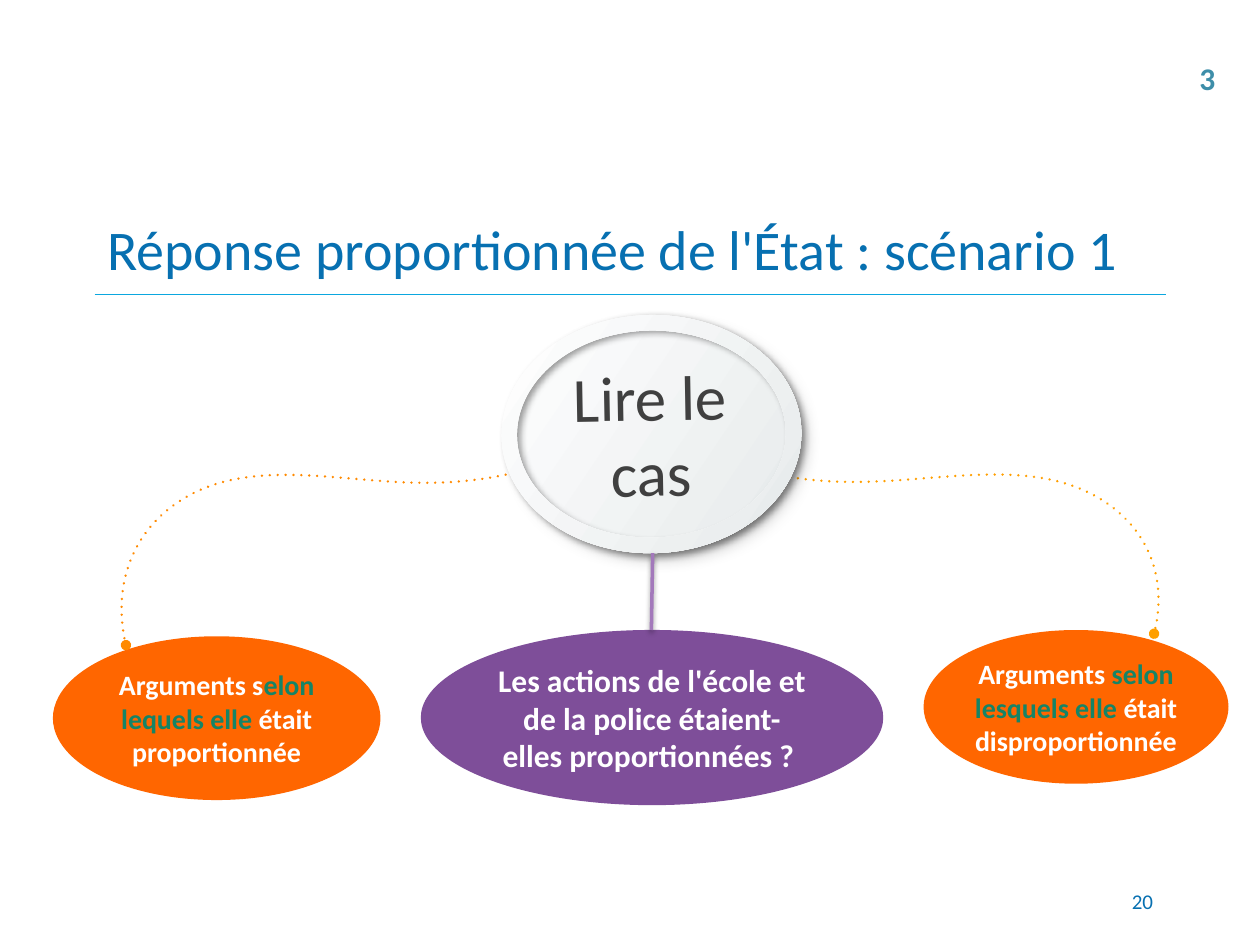
from dataclasses import dataclass
from typing import NamedTuple

from lxml.etree import SubElement
from pptx import Presentation
from pptx.dml.color import RGBColor
from pptx.enum.shapes import MSO_CONNECTOR, MSO_SHAPE
from pptx.enum.text import MSO_ANCHOR, MSO_AUTO_SIZE, PP_ALIGN
from pptx.oxml.ns import qn
from pptx.util import Inches, Pt


@dataclass(frozen=True)
class Theme:
    """Colours and type sizes of the deck."""
    font: str = "Calibri"
    blue: str = "0770B1"
    rule: str = "0BA7DF"
    teal: str = "3E8EA9"
    orange: str = "FF6600"
    left_curve: str = "FF8A00"
    right_curve: str = "FF9F00"
    purple: str = "7E4E99"
    stem: str = "A379BB"
    green: str = "158466"
    grey: str = "404040"
    white: str = "FFFFFF"
    silver: str = "E6EAEB"
    shadow: str = "000000"
    title_size: int = 32
    hub_size: int = 36
    question_size: int = 18
    argument_size: int = 16
    number_size: int = 12


class Box(NamedTuple):
    """A region in inches."""
    left: float
    top: float
    width: float
    height: float

    def lengths(self):
        """Return the four lengths of the region."""
        return [Inches(value) for value in self]


THEME = Theme()


def colour(code):
    """Turn a hex code into a colour."""
    return RGBColor.from_string(code)


def write(frame, spans, size, bold=False, align=PP_ALIGN.CENTER, inset=0.04):
    """Fill a text frame with one paragraph of (text, colour) spans."""
    frame.word_wrap = True
    frame.vertical_anchor = MSO_ANCHOR.MIDDLE
    frame.margin_left = frame.margin_right = Inches(inset)
    para = frame.paragraphs[0]
    para.alignment = align
    para.font.name, para.font.size, para.font.bold = THEME.font, Pt(size), bold
    for text, code in spans:
        span = para.add_run()
        span.text = text
        span.font.color.rgb = colour(code)


def add_shadow(shape, blur, distance, angle):
    """Give a shape a soft outer shadow."""
    effects = shape._element.spPr.find(qn("a:effectLst"))
    outer = SubElement(effects, qn("a:outerShdw"), blurRad=str(Pt(blur)),
                       dist=str(Pt(distance)), dir=str(angle * 60000),
                       algn="ctr", rotWithShape="0")
    tone = SubElement(outer, qn("a:srgbClr"), val=THEME.shadow)
    SubElement(tone, qn("a:alpha"), val="38000")


def add_line(page, start, end, code, width):
    """Draw a straight line without a shadow."""
    line = page.shapes.add_connector(
        MSO_CONNECTOR.STRAIGHT, *map(Inches, (*start, *end)))
    line.line.color.rgb = colour(code)
    line.line.width = Pt(width)
    SubElement(line._element.spPr, qn("a:effectLst"))
    return line


def add_heading(page, box):
    """Place the title and the rule along its lower edge."""
    title = page.shapes.title
    title.left, title.top, title.width, title.height = box.lengths()
    write(title.text_frame,
          [("Réponse proportionnée de l'État\u00a0: scénario 1", THEME.blue)],
          THEME.title_size, align=PP_ALIGN.LEFT, inset=0.1)
    bottom = box.top + box.height
    add_line(page, (box.left, bottom), (box.left + box.width, bottom), THEME.rule, 0.75)


def add_label(page, box, text, code, size, bold=False, align=PP_ALIGN.LEFT):
    """Place a short text box."""
    label = page.shapes.add_textbox(*box.lengths())
    write(label.text_frame, [(text, code)], size, bold, align, 0.1)
    return label


def add_bubble(page, box, code, spans, size):
    """Place a filled ellipse with bold text."""
    bubble = page.shapes.add_shape(MSO_SHAPE.OVAL, *box.lengths())
    bubble.shadow.inherit = False
    bubble.fill.solid()
    bubble.fill.fore_color.rgb = colour(code)
    bubble.line.fill.background()
    write(bubble.text_frame, spans, size, bold=True)


def add_disc(page, kind, box, blur, distance, angle):
    """Place a silver, slightly turned round shape."""
    disc = page.shapes.add_shape(kind, *box.lengths())
    disc.rotation = 359
    disc.line.fill.background()
    disc.fill.gradient()
    disc.fill.gradient_angle = 325
    for stop, code in zip(disc.fill.gradient_stops, (THEME.white, THEME.silver)):
        stop.color.rgb = colour(code)
    disc.shadow.inherit = False
    add_shadow(disc, blur, distance, angle)
    return disc


def add_hub(page, box):
    """Place the central disc with its raised ring."""
    inner = Box(box.left + 0.07, box.top + 0.05, box.width - 0.15, box.height - 0.11)
    disc = add_disc(page, MSO_SHAPE.OVAL, inner, 12, 7, 38)
    write(disc.text_frame, [("Lire le cas", THEME.grey)], THEME.hub_size)
    ring = add_disc(page, MSO_SHAPE.DONUT, box, 4, 2.7, 39)
    ring.adjustments[0] = 0.065


def bend(curve, points):
    """Turn the straight segments of a freeform into cubic curves."""
    segments = list(curve._element.iter(qn("a:lnTo")))
    for index, segment in enumerate(segments):
        cubic = segment.makeelement(qn("a:cubicBezTo"))
        for x, y in points[3 * index + 1:3 * index + 4]:
            SubElement(cubic, qn("a:pt"), x=str(x - curve.left), y=str(y - curve.top))
        segment.getparent().replace(segment, cubic)


def add_curve(page, box, code, mirrored=False):
    """Draw a dotted curve from the hub down to an argument."""
    offsets = [(0, 0), (0.3, 0.08), (0.6, 0.11), (0.91, 0.1), (1.61, 0.08), (2.4, -0.14),
               (2.93, 0.4), (3.17, 0.65), (3.26, 1.02), (3.17, 1.39)]
    start = box.left + box.width if mirrored else box.left
    sign = -1 if mirrored else 1
    points = [(Inches(start + sign * x), Inches(box.top + y * box.height / 1.39))
              for x, y in offsets]
    builder = page.shapes.build_freeform(*points[0])
    builder.add_line_segments(points[3::3], close=False)
    curve = builder.convert_to_shape()
    bend(curve, points)
    curve.shadow.inherit = False
    curve.fill.background()
    curve.line.color.rgb = colour(code)
    curve.line.width = Pt(1.5)
    outline = curve._element.spPr.find(qn("a:ln"))
    outline.set("cap", "rnd")
    dashes = SubElement(outline, qn("a:custDash"))
    SubElement(dashes, qn("a:ds"), d="100000", sp="200000")
    for end in ("a:headEnd", "a:tailEnd"):
        SubElement(outline, qn(end), type="oval")


def add_diagram(page, box):
    """Place the arguments, the question and the hub inside the region."""
    left, top = box.left, box.top
    add_bubble(page, Box(left + 0.01, top + 2.55, 2.6, 1.3), THEME.orange,
               [("Arguments s", THEME.white), ("elon lequels elle ", THEME.green),
                ("était proportionnée", THEME.white)], THEME.argument_size)
    add_curve(page, Box(left + 0.59, top + 1.23, 3.17, 1.39), THEME.left_curve, mirrored=True)
    add_bubble(page, Box(left + 6.92, top + 2.5, 2.42, 1.22), THEME.orange,
               [("Arguments ", THEME.white), ("selon lesquels elle", THEME.green),
                (" était disproportionnée", THEME.white)], THEME.argument_size)
    add_curve(page, Box(left + 5.58, top + 1.23, 3.17, 1.3), THEME.right_curve)
    add_bubble(page, Box(left + 2.93, top + 2.5, 3.67, 1.39), THEME.purple,
               [("Les actions de l'école et de la police étaient-elles "
                 "proportionnées\u00a0? ", THEME.white)], THEME.question_size)
    add_hub(page, Box(left + 3.57, top, 2.38, 1.89))
    stem = add_line(page, (left + 4.77, top + 1.89), (left + 4.76, top + 2.5), THEME.stem, 2)
    add_shadow(stem, 3.1, 1.6, 90)


def main():
    """Build and save the deck."""
    deck = Presentation()
    deck.slide_width, deck.slide_height = Inches(10), Inches(7.5)
    page = deck.slides.add_slide(deck.slide_layouts[5])
    add_heading(page, Box(0.75, 1.59, 8.5, 0.75))
    add_label(page, Box(7.17, 6.95, 2.08, 0.4), "20", THEME.blue, THEME.number_size,
              align=PP_ALIGN.RIGHT)
    add_diagram(page, Box(0.41, 2.5, 9.34, 3.89))
    marker = add_label(page, Box(9.42, 0.42, 0.32, 0.4), "3", THEME.teal,
                       THEME.question_size, bold=True)
    marker.text_frame.word_wrap = False
    marker.text_frame.auto_size = MSO_AUTO_SIZE.SHAPE_TO_FIT_TEXT
    deck.save("out.pptx")


if __name__ == "__main__":
    main()
